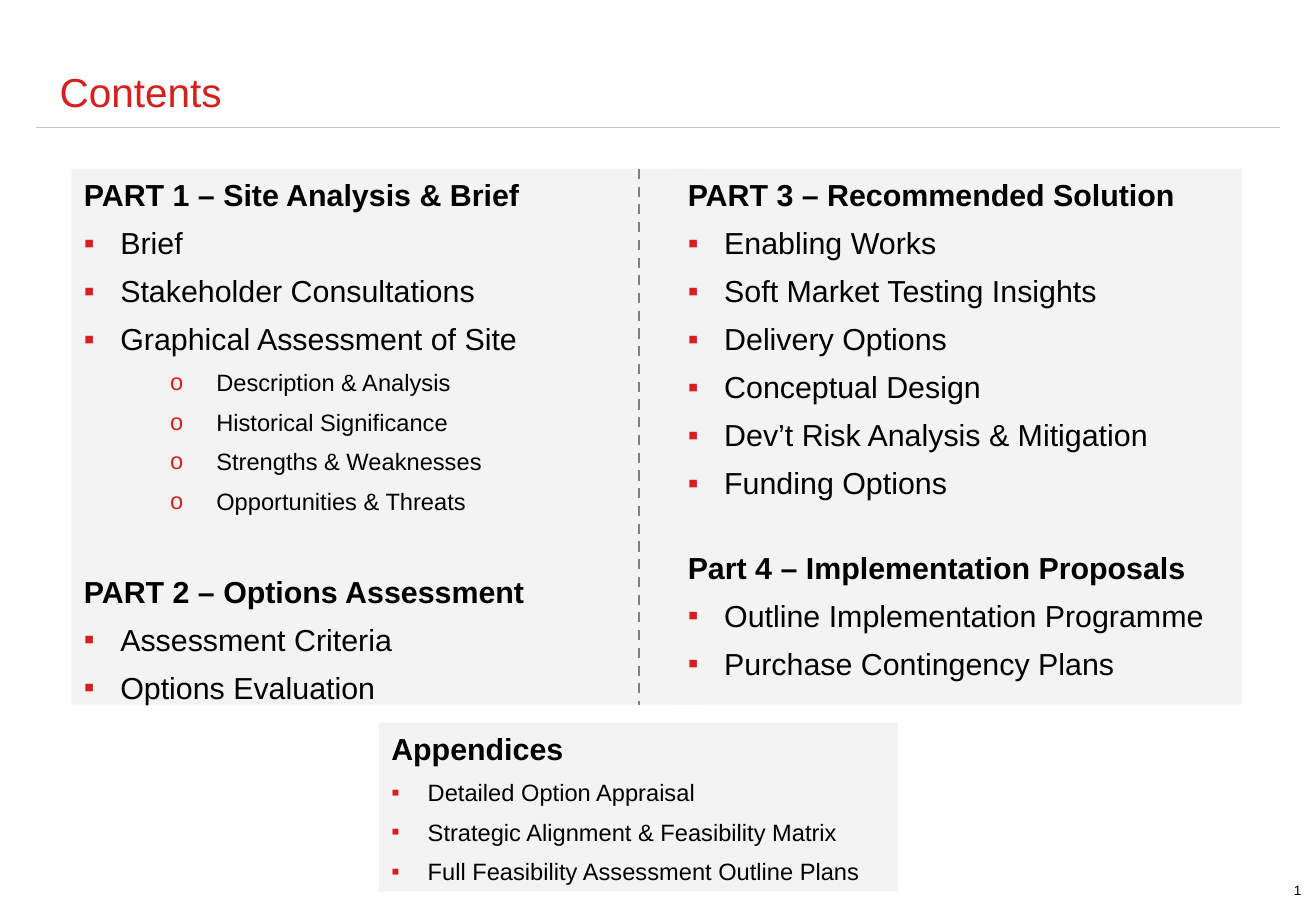
"""Build the Contents slide: two panels of parts, an appendices panel and a divider."""
from lxml import etree
from pptx import Presentation
from pptx.dml.color import RGBColor
from pptx.enum.dml import MSO_LINE
from pptx.enum.shapes import MSO_CONNECTOR
from pptx.enum.text import MSO_ANCHOR, MSO_AUTO_SIZE, PP_ALIGN
from pptx.oxml.ns import qn
from pptx.util import Inches, Pt

STRAIGHT = MSO_CONNECTOR.STRAIGHT
DASH = MSO_LINE.DASH
TOP, BOTTOM = MSO_ANCHOR.TOP, MSO_ANCHOR.BOTTOM
NO_FIT = MSO_AUTO_SIZE.NONE
LEFT, RIGHT = PP_ALIGN.LEFT, PP_ALIGN.RIGHT
RED, BLACK, PANEL = "D5201E", "000000", "F3F3F4"

STYLES = {
    "head": {"size": 18, "bold": True, "level": 0, "margin": 0, "hang": 0, "bullet": None},
    "item": {"size": 18, "bold": False, "level": 0, "margin": 0.3, "hang": 0.3, "bullet": "▪"},
    "small": {"size": 14, "bold": False, "level": 0, "margin": 0.3, "hang": 0.3, "bullet": "▪"},
    "sub": {"size": 14, "bold": False, "level": 1, "margin": 1.09, "hang": 0.38, "bullet": "o"},
}

PANELS = [
    (1, (0.59, 1.39, 5.2, 4.41), 27.5, [
        ("head", ["PART 1 – Site Analysis & Brief"]),
        ("item", ["Brief", "Stakeholder Consultations", "Graphical Assessment of Site"]),
        ("sub", ["Description & Analysis", "Historical Significance",
                 "Strengths & Weaknesses", "Opportunities & Threats"]),
        ("head", ["PART 2 – Options Assessment"]),
        ("item", ["Assessment Criteria", "Options Evaluation"]),
    ]),
    (2, (5.56, 1.39, 4.66, 4.41), 21.5, [
        ("head", ["PART 3 – Recommended Solution"]),
        ("item", ["Enabling Works", "Soft Market Testing Insights", "Delivery Options",
                  "Conceptual Design", "Dev’t Risk Analysis & Mitigation", "Funding Options"]),
        ("head", ["Part 4 – Implementation Proposals"]),
        ("item", ["Outline Implementation Programme", "Purchase Contingency Plans"]),
    ]),
    (3, (3.12, 5.95, 4.27, 1.39), 0, [
        ("head", ["Appendices"]),
        ("small", ["Detailed Option Appraisal", "Strategic Alignment & Feasibility Matrix",
                   "Full Feasibility Assessment Outline Plans"]),
    ]),
]

LINES = [
    ((0.3, 1.05, 10.53, 1.05), "C3C5C7", 0.75, None),
    ((5.26, 1.39, 5.26, 5.8), "808080", 1.5, DASH),
]


def rgb(value):
    return RGBColor.from_string(value)


def set_frame(sp, box, anchor, side, edge):
    sp.left, sp.top, sp.width, sp.height = [Inches(v) for v in box]
    formats = {"word_wrap": True, "auto_size": NO_FIT, "vertical_anchor": anchor,
               "margin_left": Inches(side), "margin_right": Inches(side),
               "margin_top": Inches(edge), "margin_bottom": Inches(edge)}
    for name, value in formats.items():
        setattr(sp.text_frame, name, value)
    return sp.text_frame


prs = Presentation()
prs.slide_width, prs.slide_height = Inches(10.83), Inches(7.5)
s = prs.slides.add_slide(prs.slide_layouts.get_by_name("Comparison"))
holders = {sp.placeholder_format.idx: sp for sp in s.placeholders}
unused = holders[4].element
unused.getparent().remove(unused)

tf = set_frame(s.shapes.title, (0.44, -0.01, 10.39, 1.01), BOTTOM, 0.05, 0.05)
number = s.shapes.add_textbox(0, 0, 0, 0)
number_tf = set_frame(number, (10.54, 7.21, 0.17, 0.23), TOP, 0, 0.05)
for frame, text, size, color, align in [(tf, "Contents", 24, RED, LEFT),
                                        (number_tf, "2", 8, BLACK, RIGHT)]:
    p = frame.paragraphs[0]
    p.alignment = align
    r = p.add_run()
    r.text = text
    r.font.name, r.font.size, r.font.bold = "Arial", Pt(size), False
    r.font.color.rgb = rgb(color)
tf.paragraphs[0].line_spacing = Pt(34)
field = number_tf.paragraphs[0].runs[0]._r
field.tag = qn("a:fld")
field.set("id", "{B6F15528-21DE-4FAA-801E-634DDDAF4B2B}")
field.set("type", "slidenum")

for idx, box, gap, groups in PANELS:
    sp = holders[idx]
    tf = set_frame(sp, box, TOP, 0.1, 0.05)
    sp.fill.solid()
    sp.fill.fore_color.rgb = rgb(PANEL)
    entries = [(kind, text) for kind, texts in groups for text in texts]
    for i, (kind, text) in enumerate(entries):
        style = STYLES[kind]
        p = tf.add_paragraph() if i else tf.paragraphs[0]
        pPr = p._p.get_or_add_pPr()
        pPr.set("marL", str(Inches(style["margin"])))
        pPr.set("indent", str(-Inches(style["hang"])))
        if style["bullet"]:
            clr = etree.SubElement(pPr, qn("a:buClr"))
            etree.SubElement(clr, qn("a:srgbClr"), val=RED)
            etree.SubElement(pPr, qn("a:buFont"), typeface="Arial")
            etree.SubElement(pPr, qn("a:buChar"), char=style["bullet"])
        else:
            etree.SubElement(pPr, qn("a:buNone"))
        formats = {"level": style["level"], "alignment": LEFT, "line_spacing": 1.04,
                   "space_before": Pt(gap if i and kind == "head" else 0),
                   "space_after": Pt(6)}
        for name, value in formats.items():
            setattr(p, name, value)
        r = p.add_run()
        r.text = text
        for name, value in {"name": "Arial", "size": Pt(style["size"]),
                            "bold": style["bold"]}.items():
            setattr(r.font, name, value)
        r.font.color.rgb = rgb(BLACK)

for ends, color, width, dash in LINES:
    line = s.shapes.add_connector(STRAIGHT, *[Inches(v) for v in ends])
    line.line.color.rgb = rgb(color)
    line.line.width = Pt(width)
    if dash:
        line.line.dash_style = dash
    etree.SubElement(line._element.spPr, qn("a:effectLst"))

prs.save("out.pptx")
